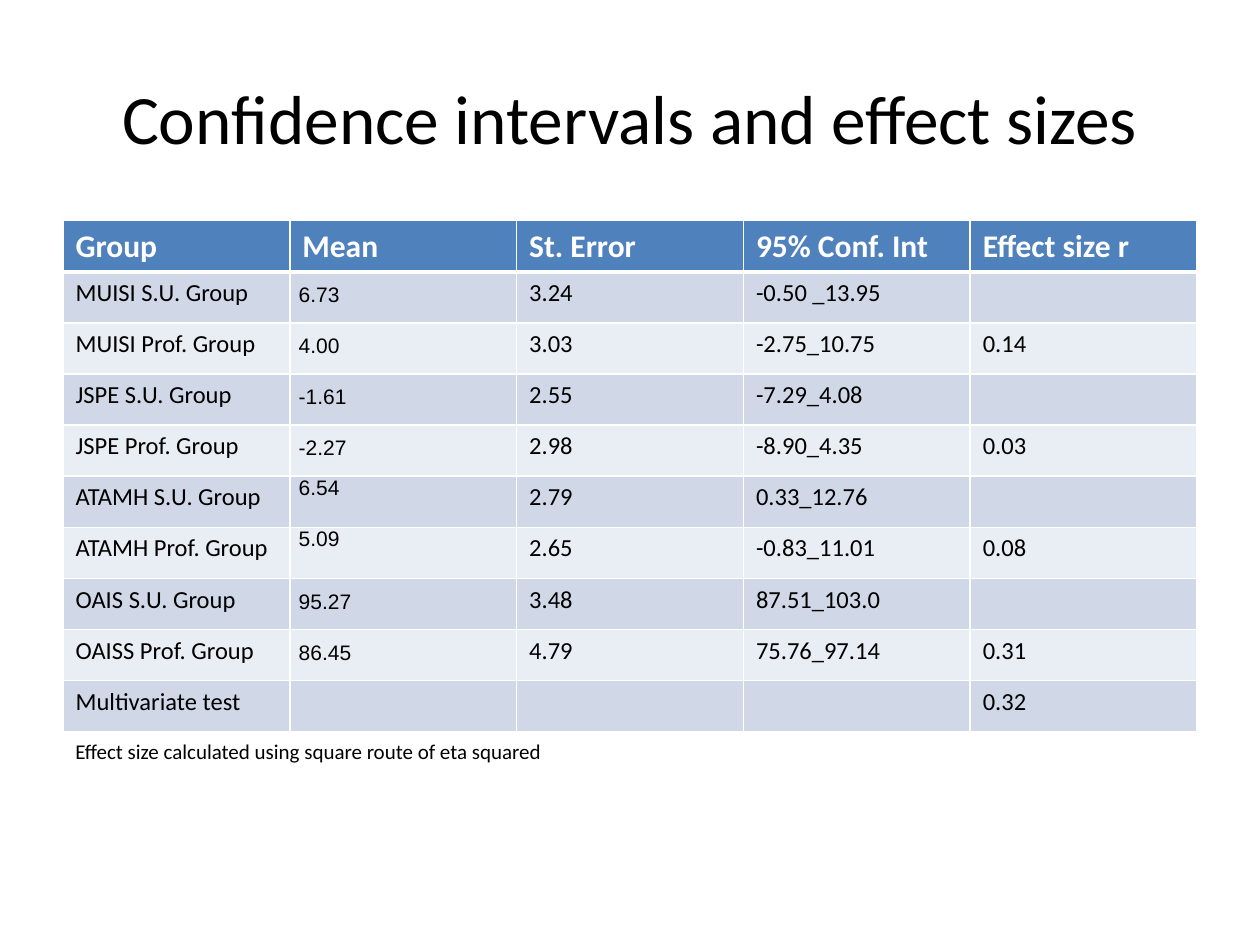
from dataclasses import dataclass

from lxml.etree import SubElement
from pptx import Presentation
from pptx.dml.color import RGBColor
from pptx.enum.text import MSO_ANCHOR, PP_ALIGN
from pptx.oxml.ns import qn
from pptx.util import Cm, Pt


@dataclass(frozen=True)
class Theme:
    black: str = "000000"
    white: str = "FFFFFF"
    header: str = "4F81BD"
    bands: tuple = ("D0D8E8", "E9EDF4")
    body_font: str = "Calibri"
    mean_font: str = "Arial"
    title_size: float = 39.6
    header_size: float = 18
    body_size: float = 14
    small_size: float = 12
    border: float = 1
    header_border: float = 3


THEME = Theme()

HEADERS = ["Group", "Mean", "St. Error", "95% Conf. Int", "Effect size r"]
ROWS = [
    ["MUISI S.U. Group", "6.73", "3.24", "-0.50 _13.95", ""],
    ["MUISI Prof. Group", "4.00", "3.03", "-2.75_10.75", "0.14"],
    ["JSPE S.U. Group", "-1.61", "2.55", "-7.29_4.08", ""],
    ["JSPE Prof. Group", "-2.27", "2.98", "-8.90_4.35", "0.03"],
    ["ATAMH S.U. Group", "6.54", "2.79", "0.33_12.76", ""],
    ["ATAMH Prof. Group", "5.09", "2.65", "-0.83_11.01", "0.08"],
    ["OAIS S.U. Group", "95.27", "3.48", "87.51_103.0", ""],
    ["OAISS Prof. Group", "86.45", "4.79", "75.76_97.14", "0.31"],
    ["Multivariate test", "", "", "", "0.32"],
]
MEAN_COLUMN = HEADERS.index("Mean")


def write_text(frame, text, *, size=THEME.body_size, font=THEME.body_font,
               color=THEME.black, bold=False, align=PP_ALIGN.LEFT, spacing=None):
    paragraph = frame.paragraphs[0]
    paragraph.alignment = align
    paragraph.line_spacing = spacing
    run = paragraph.add_run()
    run.text = text
    run.font.size = Pt(size)
    run.font.name = font
    run.font.bold = bold
    run.font.color.rgb = RGBColor.from_string(color)


def add_text_box(slide, box, text, anchor=MSO_ANCHOR.TOP, **text_format):
    frame = slide.shapes.add_textbox(*map(Cm, box)).text_frame
    frame.word_wrap = True
    frame.vertical_anchor = anchor
    write_text(frame, text, **text_format)


def set_borders(cell, top, bottom):
    properties = cell._tc.get_or_add_tcPr()
    widths = {"a:lnL": THEME.border, "a:lnR": THEME.border,
              "a:lnT": top, "a:lnB": bottom}
    for tag, width in widths.items():
        line = SubElement(properties, qn(tag), w=str(Pt(width)))
        fill = SubElement(line, qn("a:solidFill"))
        SubElement(fill, qn("a:srgbClr"), val=THEME.white)


def fill_cell(cell, color, top=THEME.border, bottom=THEME.border):
    set_borders(cell, top, bottom)
    cell.fill.solid()
    cell.fill.fore_color.rgb = RGBColor.from_string(color)


def write_mean(cell, text):
    cell.margin_left = cell.margin_right = Cm(0.18)
    cell.margin_top = cell.margin_bottom = 0
    # The ATAMH means are set tight, the others justified with open lines
    layout = {} if text in ("6.54", "5.09") else {
        "align": PP_ALIGN.JUSTIFY, "spacing": 1.5}
    write_text(cell.text_frame, text, size=THEME.small_size,
               font=THEME.mean_font, **layout)


def add_results_table(slide, box):
    table = slide.shapes.add_table(
        len(ROWS) + 1, len(HEADERS), *map(Cm, box)).table
    table.first_row = table.horz_banding = False

    # Header row
    for column, text in enumerate(HEADERS):
        cell = table.cell(0, column)
        fill_cell(cell, THEME.header, bottom=THEME.header_border)
        write_text(cell.text_frame, text, size=THEME.header_size,
                   color=THEME.white, bold=True)

    # Banded result rows
    for row, values in enumerate(ROWS, start=1):
        top = THEME.header_border if row == 1 else THEME.border
        for column, text in enumerate(values):
            cell = table.cell(row, column)
            fill_cell(cell, THEME.bands[(row - 1) % 2], top=top)
            if text and column == MEAN_COLUMN:
                write_mean(cell, text)
            elif text:
                write_text(cell.text_frame, text)


def add_results_slide(presentation, box):
    left, top, width = box
    slide = presentation.slides.add_slide(presentation.slide_layouts[6])
    # Title
    add_text_box(slide, (left, top, width, 3.18),
                 "Confidence intervals and effect sizes",
                 anchor=MSO_ANCHOR.MIDDLE, size=THEME.title_size,
                 align=PP_ALIGN.CENTER)
    # Table of results
    add_results_table(slide, (left, top + 3.69, width, 10.3))
    # Note below the table
    add_text_box(slide, (left, top + 14, 10.6, 0.77),
                 "Effect size calculated using square route of eta squared",
                 size=THEME.small_size)


def main():
    presentation = Presentation()
    presentation.slide_width = Cm(25.4)
    presentation.slide_height = Cm(19.05)
    add_results_slide(presentation, (1.27, 0.76, 22.86))
    presentation.save("out.pptx")


if __name__ == "__main__":
    main()
